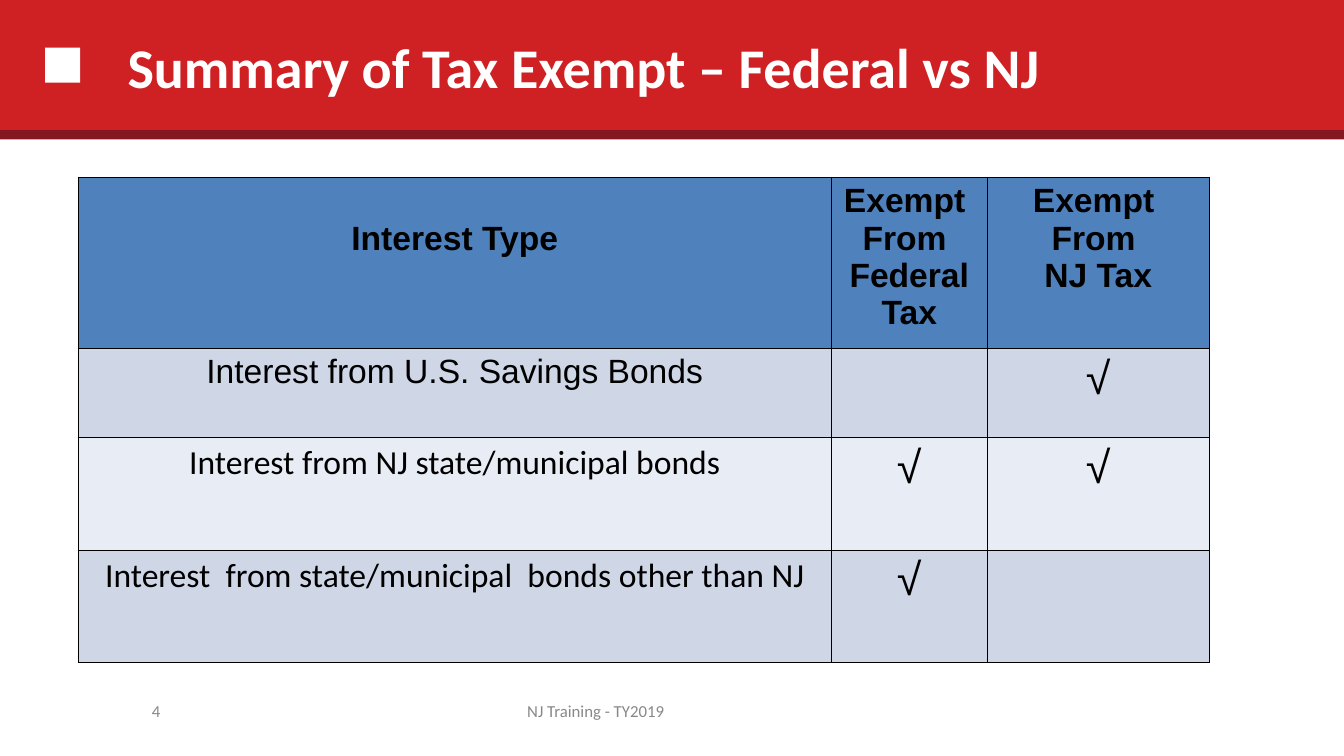
from lxml import etree
from pptx import Presentation
from pptx.dml.color import RGBColor
from pptx.enum.shapes import MSO_SHAPE
from pptx.enum.text import MSO_ANCHOR, PP_ALIGN
from pptx.oxml.ns import qn
from pptx.util import Pt

RECT = MSO_SHAPE.RECTANGLE
MIDDLE = MSO_ANCHOR.MIDDLE
LEFT, CENTER, RIGHT = PP_ALIGN.LEFT, PP_ALIGN.CENTER, PP_ALIGN.RIGHT

RED = RGBColor(0xCF, 0x21, 0x24)
DARK_RED = RGBColor(0x84, 0x17, 0x21)
WHITE = RGBColor(0xFF, 0xFF, 0xFF)
BLACK = RGBColor(0, 0, 0)
GRAY = RGBColor(0x88, 0x88, 0x88)
HEADER_BLUE = RGBColor(0x4F, 0x81, 0xBD)
BAND_DARK = RGBColor(0xCF, 0xD7, 0xE7)
BAND_LIGHT = RGBColor(0xE8, 0xEC, 0xF4)


def write(tf, text, align, color, **font):
    """Fill a text frame, one paragraph per line of text."""
    for i, line in enumerate(text.split("\n")):
        p = tf.add_paragraph() if i else tf.paragraphs[0]
        p.alignment = align
        r = p.add_run()
        r.text = line
        r.font.color.rgb = color
        for name, value in font.items():
            setattr(r.font, name, value)


def add_borders(cell):
    """Draw a black 1 pt line on each side, placed ahead of the cell's fill."""
    tc_pr = cell._tc.get_or_add_tcPr()
    for i, side in enumerate(("lnL", "lnR", "lnT", "lnB")):
        ln = etree.Element(qn(f"a:{side}"), w=str(Pt(1)))
        fill = etree.SubElement(ln, qn("a:solidFill"))
        etree.SubElement(fill, qn("a:srgbClr"), val=str(BLACK))
        tc_pr.insert(i, ln)


prs = Presentation()
prs.slide_width, prs.slide_height = Pt(960), Pt(540)
s = prs.slides.add_slide(prs.slide_layouts[6])

# Title band
for box, color in [
    ((0, -0.5, 960, 95.5), RED),
    ((32.3, 34, 25, 25), WHITE),
    ((0, 93, 960, 6.5), DARK_RED),
]:
    sp = s.shapes.add_shape(RECT, *map(Pt, box))
    sp.shadow.inherit = False
    sp.fill.solid()
    sp.fill.fore_color.rgb = color
    sp.line.fill.background()

# Title and footer
small = {"size": Pt(12), "name": "Calibri"}
large = {"size": Pt(40), "name": "Calibri", "bold": True}
for box, text, align, color, font in [
    ((84, 2, 768, 90), "Summary of Tax Exempt – Federal vs NJ", LEFT, WHITE, large),
    ((273.6, 493.2, 304, 28.8), "NJ Training - TY2019", CENTER, GRAY, small),
    ((48, 493.2, 73.6, 28.8), "4", RIGHT, GRAY, small),
]:
    tf = s.shapes.add_textbox(*map(Pt, box)).text_frame
    tf.word_wrap = True
    tf.vertical_anchor = MIDDLE
    write(tf, text, align, color, **font)

# Exemption table
CHECK = "√"
col_widths = (538, 111.4, 158.6)
rows = [
    (117, HEADER_BLUE, "Arial",
     ("Interest Type", "Exempt \nFrom \nFederal Tax", "Exempt \nFrom \nNJ Tax")),
    (63.6, BAND_DARK, "Arial", ("Interest from U.S. Savings Bonds", "", CHECK)),
    (80.5, BAND_LIGHT, "Calibri",
     ("Interest from NJ state/municipal bonds", CHECK, CHECK)),
    (80.5, BAND_DARK, "Calibri",
     ("Interest  from state/municipal  bonds other than NJ", CHECK, "")),
]
heights = [row[0] for row in rows]
frame = s.shapes.add_table(len(rows), len(col_widths), Pt(55.8), Pt(126.5),
                           Pt(sum(col_widths)), Pt(sum(heights)))
table = frame.table
for column, width in zip(table.columns, col_widths):
    column.width = Pt(width)

for i, (height, fill, label_font, texts) in enumerate(rows):
    table.rows[i].height = Pt(height)
    for j, text in enumerate(texts):
        cell = table.cell(i, j)
        cell.fill.solid()
        cell.fill.fore_color.rgb = fill
        add_borders(cell)
        if text:
            write(cell.text_frame, text, CENTER, BLACK, bold=i == 0,
                  size=Pt(32 if text == CHECK else 24),
                  name="Arial" if j else label_font)

# The first heading sits one line lower than its neighbours
table.cell(0, 0).margin_top = Pt(30.6)

prs.save("out.pptx")
